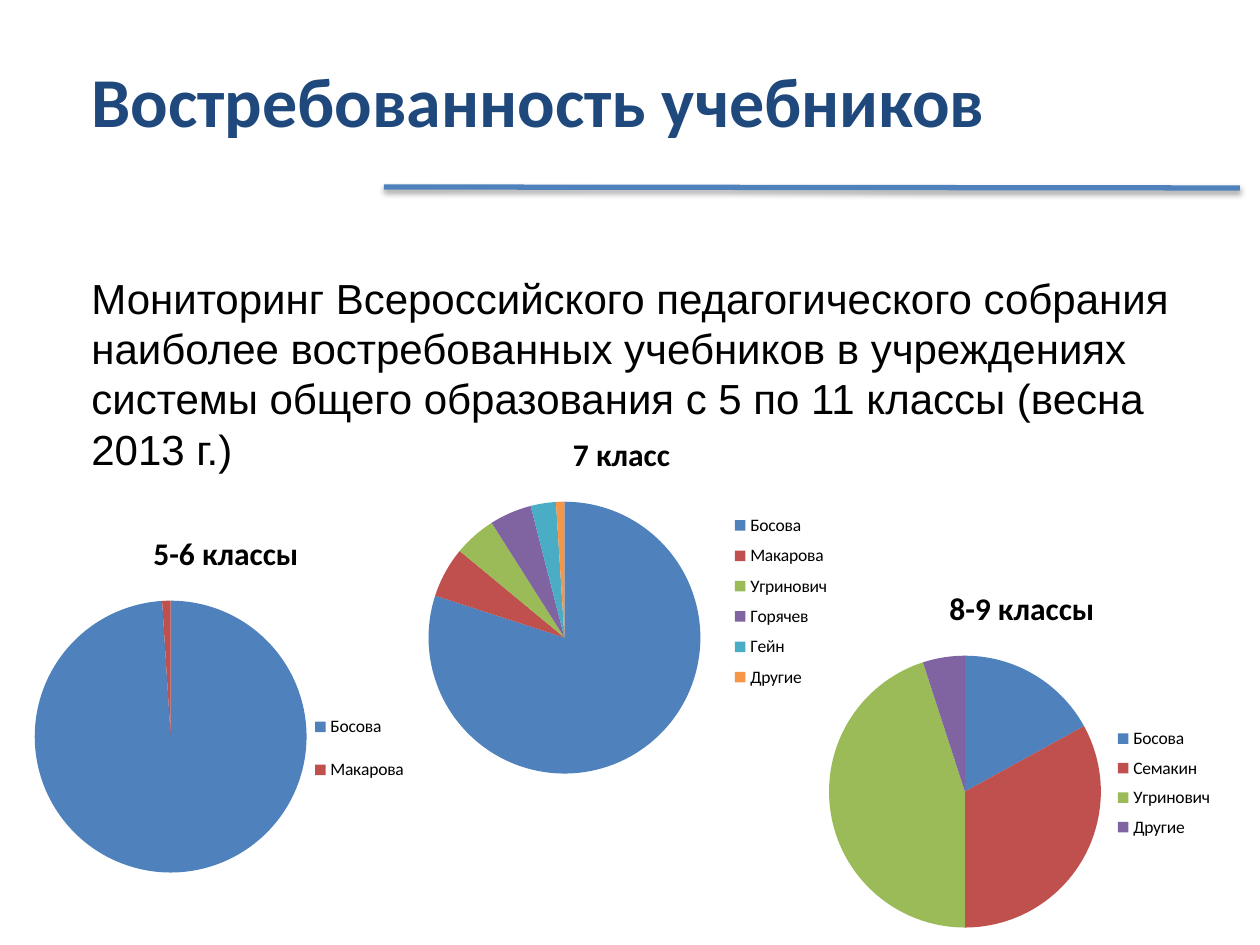
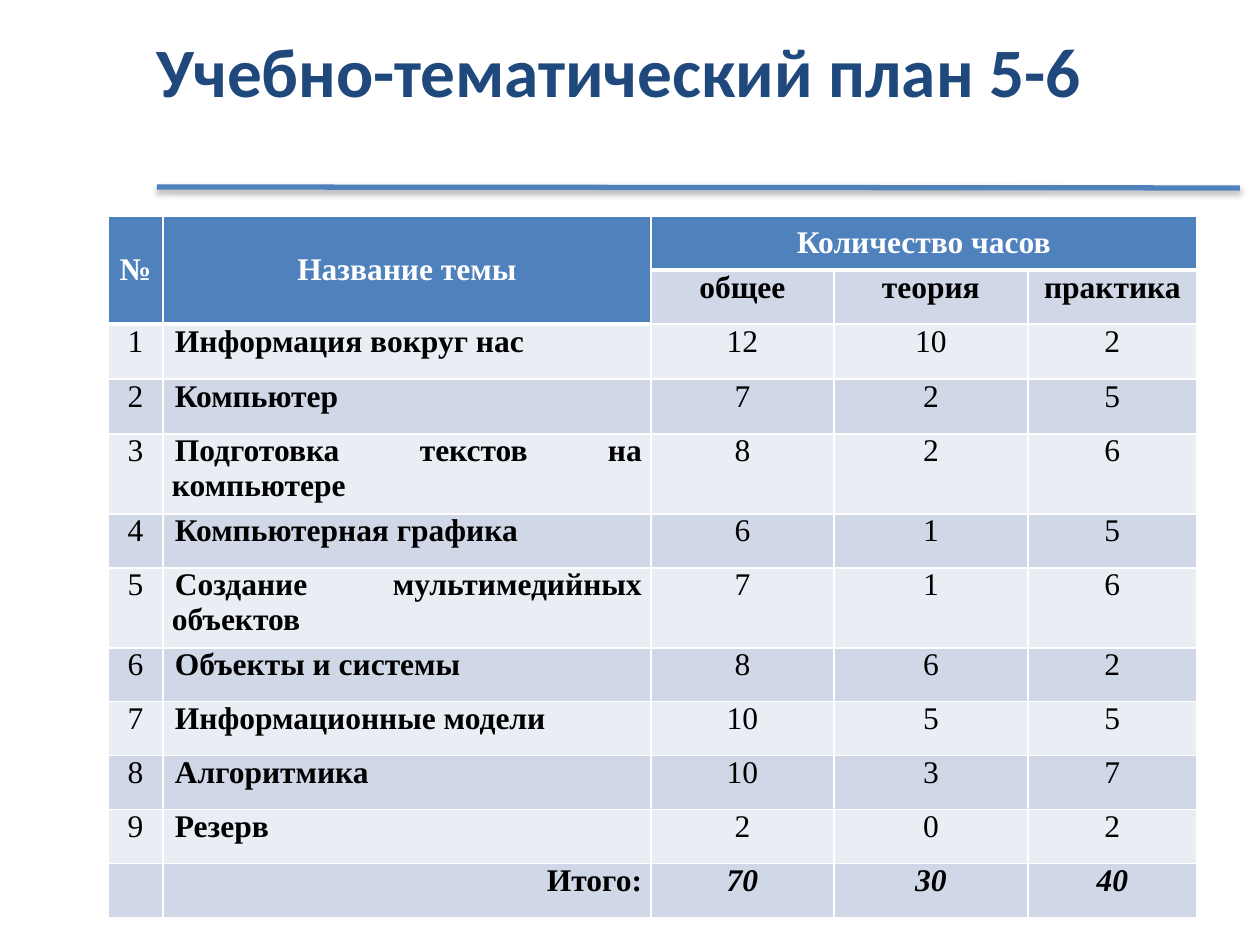
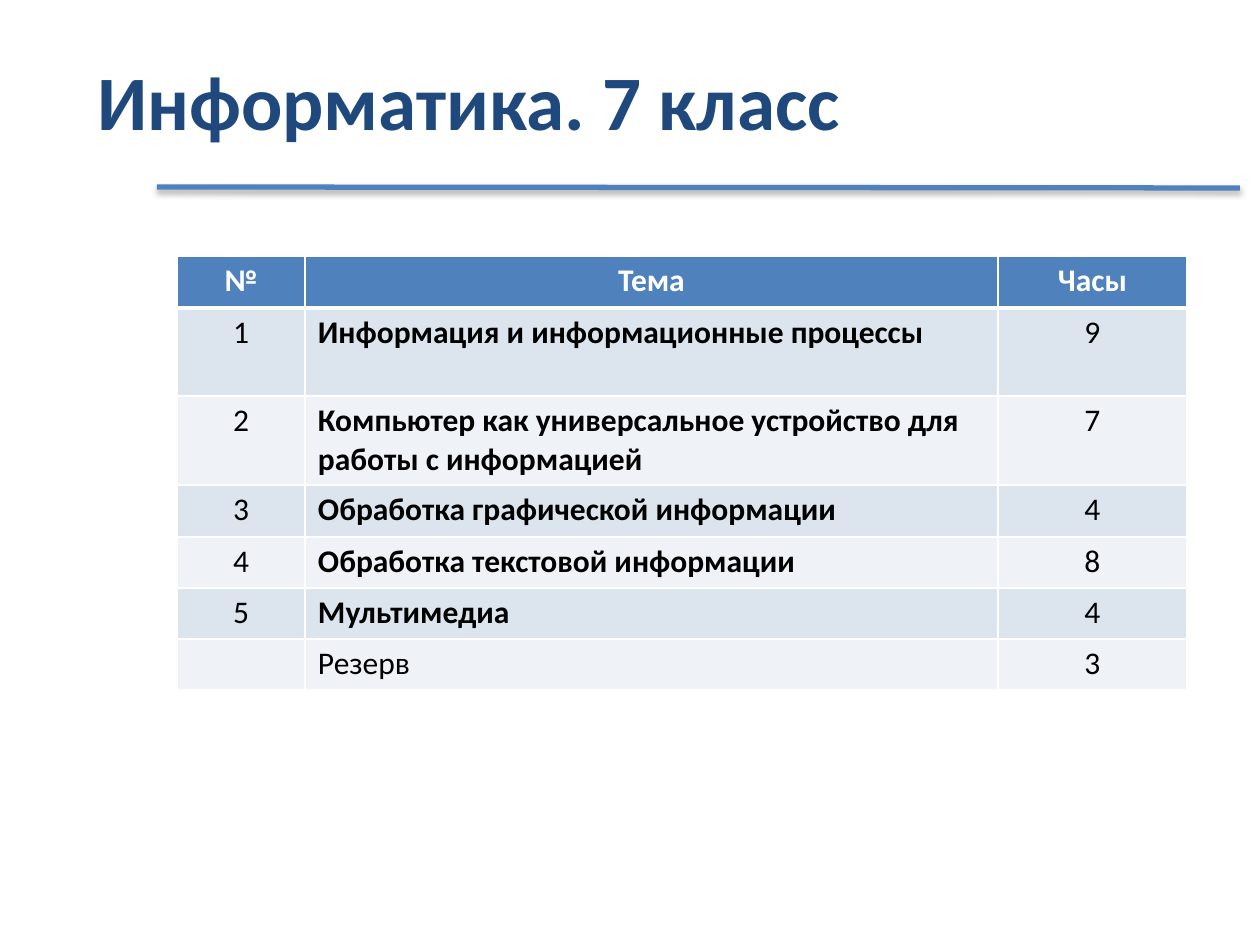
from lxml import etree
from pptx import Presentation, util as u
from pptx.chart.data import CategoryChartData
from pptx.dml.color import RGBColor
from pptx.enum import chart as ch, shapes, text as tx
from pptx.oxml import parse_xml
from pptx.oxml.ns import qn

# Shared look
HUES = {
    "title": "1F497D", "ink": "000000", "white": "FFFFFF", "blue": "4F81BD",
    "dark": "D0D8E8", "light": "E9EDF4", "mist": "DCE5EE", "pale": "EFF3F7",
}
SLICES = ["4F81BD", "C0504D", "9BBB59", "8064A2", "4BACC6", "F79646"]
SANS, SERIF, BODY = "Calibri", "Times New Roman", "Arial"
ALIGN = {"l": tx.PP_ALIGN.LEFT, "c": tx.PP_ALIGN.CENTER,
         "r": tx.PP_ALIGN.RIGHT, "j": tx.PP_ALIGN.JUSTIFY}
NS = 'xmlns:a="http://schemas.openxmlformats.org/drawingml/2006/main"'
SHADOW = (f'<a:effectLst {NS}><a:outerShdw blurRad="40000" dist="23000" '
          'dir="5400000" rotWithShape="0"><a:srgbClr val="000000">'
          '<a:alpha val="35000"/></a:srgbClr></a:outerShdw></a:effectLst>')


def px(num):
    return u.Emu(round(num * 914400 / 126))


def rgb(hue):
    return RGBColor.from_string(HUES.get(hue, hue))


def style(font, size, face, hue="ink", bold=False, slant=False):
    font.size, font.name = u.Pt(size), face
    font.bold, font.italic = bold, slant
    font.color.rgb = rgb(hue)


def put(frame, words, align="l", dent=0, **fmt):
    """Write one formatted paragraph into a text frame."""
    par = frame.paragraphs[0]
    par.alignment = ALIGN[align]
    if dent:
        par._p.get_or_add_pPr().set("indent", str(px(dent)))
    run = par.add_run()
    run.text = words
    style(run.font, **fmt)


def box(slide, spot, words, mid=False, **fmt):
    frame = slide.shapes.add_textbox(*map(px, spot)).text_frame
    frame.word_wrap = True
    frame.vertical_anchor = tx.MSO_ANCHOR.MIDDLE if mid else tx.MSO_ANCHOR.TOP
    put(frame, words, **fmt)


def head(slide, spot, words, size, left):
    """Title and the shadowed rule under it."""
    box(slide, spot, words, mid=True, size=size, face=SANS, hue="title", bold=True)
    rule = slide.shapes.add_connector(
        shapes.MSO_CONNECTOR.STRAIGHT, px(left), px(187), px(1240), px(188))
    rule.line.color.rgb = rgb("blue")
    rule.line.width = u.Pt(3)
    rule._element.spPr.append(parse_xml(SHADOW))


def place(legend, spot, size):
    """Fix the legend's box, given in px inside a chart of this size."""
    legend._element.get_or_add_layout() if hasattr(
        legend._element, "get_or_add_layout") else None
    root = legend._element
    for old in root.findall(qn("c:layout")):
        root.remove(old)
    layout = etree.Element(qn("c:layout"))
    manual = etree.SubElement(layout, qn("c:manualLayout"))
    for side in "xy":
        etree.SubElement(manual, qn(f"c:{side}Mode"), val="edge")
    for side, num, full in zip("xywh", spot, size * 2):
        etree.SubElement(manual, qn(f"c:{side}"), val=f"{num / full:.4f}")
    root.find(qn("c:legendPos")).addnext(layout)


def pie(slide, spot, name, shares, key):
    data = CategoryChartData()
    data.categories = list(shares)
    data.add_series("Series 1", list(shares.values()))
    chart = slide.shapes.add_chart(ch.XL_CHART_TYPE.PIE, *map(px, spot), data).chart
    style(chart.font, 10, SANS)
    chart.has_title = True
    put(chart.chart_title.text_frame, name, align="c", size=18, face=SANS, bold=True)
    chart.has_legend = True
    chart.legend.position = ch.XL_LEGEND_POSITION.RIGHT
    chart.legend.include_in_layout = False
    place(chart.legend, key, spot[2:])
    plot = chart.plots[0]
    plot.vary_by_categories = True
    for num, hue in zip(range(len(shares)), SLICES):
        fill = plot.series[0].points[num].format.fill
        fill.solid()
        fill.fore_color.rgb = rgb(hue)


def edge(cell, side, width):
    line = etree.SubElement(cell._tc.get_or_add_tcPr(), qn(f"a:ln{side}"),
                            w=str(u.Pt(width)))
    fill = etree.SubElement(line, qn("a:solidFill"))
    etree.SubElement(fill, qn("a:srgbClr"), val=HUES["white"])


def grid(slide, spot, cols, rows, cells, tops, bands, pads, look):
    """Table; tops holds the header places, look(row, col) a cell's format."""
    size = (sum(cols), sum(rows))
    table = slide.shapes.add_table(
        len(rows), len(cols), *map(px, spot + size)).table
    for col, wide in zip(table.columns, cols):
        col.width = px(wide)
    for row, high in zip(table.rows, rows):
        row.height = px(high)
    for r, line in enumerate(cells):
        for c, words in enumerate(line):
            cell = table.cell(r, c)
            top = (r, c) in tops
            for side, thick in (("L", False), ("R", False),
                                ("T", (r - 1, c) in tops), ("B", top)):
                edge(cell, side, 3 if thick else 1)
            cell.fill.solid()
            cell.fill.fore_color.rgb = rgb("blue" if top else bands[r % 2])
            cell.margin_left = cell.margin_right = px(pads[0])
            cell.margin_top = cell.margin_bottom = px(pads[1])
            if words:
                put(cell.text_frame, words, size=18, **look(r, c))
    return table


# Slides
def demand(slide):
    head(slide, (79, 32, 1129, 136), "Востребованность учебников", 40, 384)
    box(slide, (79, 266, 1124, 217),
        "Мониторинг Всероссийского педагогического собрания наиболее "
        "востребованных учебников в учреждениях системы общего образования "
        "с 5 по 11 классы (весна 2013 г.)", size=24, face=BODY)
    pie(slide, (0, 512, 452, 378), "5-6 классы",
        {"Босова": 99, "Макарова": 1}, (309, 182, 101, 109))
    pie(slide, (364, 413, 515, 378), "7 класс",
        {"Босова": 80, "Макарова": 6, "Угринович": 5,
         "Горячев": 5, "Гейн": 3, "Другие": 1}, (365, 92, 104, 193))
    pie(slide, (784, 567, 476, 378), "8-9 классы",
        {"Босова": 17, "Семакин": 33, "Угринович": 45, "Другие": 5},
        (328, 152, 104, 128))


def plan(slide):
    topics = [
        ("Информация вокруг нас", 12, 10, 2),
        ("Компьютер", 7, 2, 5),
        ("Подготовка текстов на компьютере", 8, 2, 6),
        ("Компьютерная графика", 6, 1, 5),
        ("Создание мультимедийных объектов", 7, 1, 6),
        ("Объекты и системы", 8, 6, 2),
        ("Информационные модели", 10, 5, 5),
        ("Алгоритмика", 10, 3, 7),
        ("Резерв", 2, 0, 2),
    ]
    cells = [("№", "Название темы", "Количество часов", "", ""),
             ("", "", "общее", "теория", "практика")]
    cells += [(str(n), name, *map(str, hours))
              for n, (name, *hours) in enumerate(topics, 1)]
    cells.append(("", "Итого:", "70", "30", "40"))
    last = len(cells) - 1
    tops = {(0, c) for c in range(5)} | {(1, 0), (1, 1)}

    def look(r, c):
        name = c == 1 and r > 1
        return dict(face=SERIF, hue="ink" if r else "white",
                    bold=r < 2 or r == last or name,
                    slant=r == last and c > 1,
                    align=("r" if r == last else "j") if name else "c",
                    dent=3 if name else 0)

    rows = [54, 54, 55, 55, 80, 54, 80] + [54] * 5
    table = grid(slide, (108, 216), [55, 488, 183, 194, 169], rows, cells,
                 tops, ("light", "dark"), (9, 0), look)
    for first, end in (((0, 0), (1, 0)), ((0, 1), (1, 1)), ((0, 2), (0, 4))):
        table.cell(*first).merge(table.cell(*end))
        table.cell(*first).vertical_anchor = tx.MSO_ANCHOR.MIDDLE
    head(slide, (144, 26, 1053, 87), "Учебно-тематический план 5-6", 39.6, 157)


def course(slide):
    head(slide, (85, 32, 1124, 136), "Информатика. 7 класс", 44, 157)
    cells = [
        ("№", "Тема", "Часы"),
        ("1", "Информация и информационные процессы", "9"),
        ("2", "Компьютер как универсальное устройство для работы с информацией", "7"),
        ("3", "Обработка графической информации", "4"),
        ("4", "Обработка текстовой информации", "8"),
        ("5", "Мультимедиа", "4"),
        ("", "Резерв", "3"),
    ]

    def look(r, c):
        return dict(face=SANS, hue="ink" if r else "white",
                    bold=r == 0 or (c == 1 and r < 6),
                    align="l" if r and c == 1 else "c")

    rows = [52, 88, 89, 52] + [51] * 3
    grid(slide, (177, 256), [128, 693, 189], rows, cells,
         {(0, c) for c in range(3)}, ("pale", "mist"), (13, 6), look)


def main():
    deck = Presentation()
    deck.slide_width, deck.slide_height = px(1260), px(945)
    for build in (demand, plan, course):
        build(deck.slides.add_slide(deck.slide_layouts[6]))
    deck.save("out.pptx")


if __name__ == "__main__":
    main()
